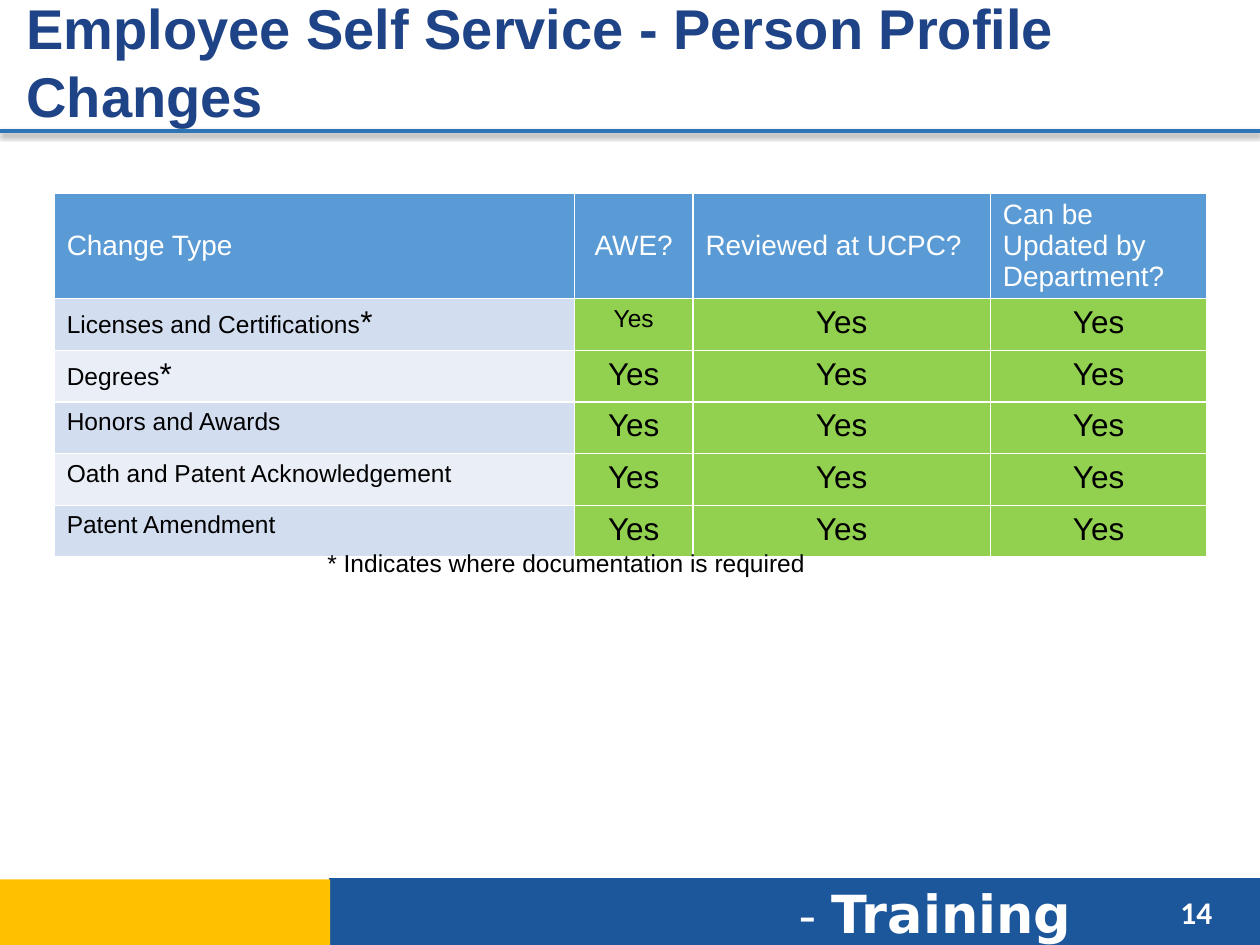
from lxml import etree
from pptx import Presentation
from pptx.dml.color import RGBColor
from pptx.enum import shapes, text
from pptx.oxml import parse_xml
from pptx.util import Inches, Pt


def rgb(value):
    return RGBColor.from_string(value)


def style(run, size, color, font="Arial", bold=False):
    run.font.size = Pt(size)
    run.font.name = font
    run.font.bold = bold
    run.font.color.rgb = rgb(color)


prs = Presentation()
prs.slide_width, prs.slide_height = Inches(10), Inches(7.5)
slide = prs.slides.add_slide(prs.slide_layouts[5])

# Footer bands
for left, top, width, color in [(2.61, 6.97, 7.39, "1D579B"),
                                (-0.01, 6.98, 2.63, "FFC000")]:
    band = slide.shapes.add_shape(shapes.MSO_SHAPE.RECTANGLE, Inches(left),
                                  Inches(top), Inches(width), Inches(0.55))
    band.shadow.inherit = False
    band.fill.solid()
    band.fill.fore_color.rgb = rgb(color)
    band.line.fill.background()

# Rule under the title, with a soft shadow
rule = slide.shapes.add_connector(shapes.MSO_CONNECTOR.STRAIGHT, Inches(0),
                                  Inches(1.04), Inches(10), Inches(1.04))
rule.line.color.rgb = rgb("2E75B5")
rule.line.width = Pt(2.25)
rule._element.spPr.append(parse_xml(
    '<a:effectLst xmlns:a="http://schemas.openxmlformats.org/drawingml/2006/main">'
    '<a:outerShdw blurRad="39370" dist="20320" dir="5400000" rotWithShape="0">'
    '<a:srgbClr val="000000"><a:alpha val="38000"/></a:srgbClr>'
    '</a:outerShdw></a:effectLst>'))

# Title
title = slide.shapes.title
title.left, title.top = Inches(0.11), Inches(-0.04)
title.width, title.height = Inches(9.37), Inches(1.05)
title.text_frame.text = "Employee Self Service - Person Profile Changes"
title.text_frame.auto_size = text.MSO_AUTO_SIZE.NONE
title.text_frame.vertical_anchor = text.MSO_ANCHOR.MIDDLE
heading = title.text_frame.paragraphs[0]
heading.alignment = text.PP_ALIGN.LEFT
style(heading.runs[0], 32, "1E4386", bold=True)

# Table of change types
headers = ["Change Type", "AWE?", "Reviewed at UCPC?",
           "Can be Updated by Department?"]
changes = ["Licenses and Certifications*", "Degrees*", "Honors and Awards",
           "Oath and Patent Acknowledgement", "Patent Amendment"]
rows = [headers] + [[change] + ["Yes"] * 3 for change in changes]
table = slide.shapes.add_table(len(rows), len(headers), Inches(0.43), Inches(1.53),
                               Inches(9.15), Inches(0.41 * len(rows))).table
for column, width in zip(table.columns, [4.13, 0.94, 2.36, 1.72]):
    column.width = Inches(width)

for r, row in enumerate(rows):
    table.rows[r].height = Inches(0.41)
    for c, value in enumerate(row):
        cell = table.cell(r, c)
        paragraph = cell.text_frame.paragraphs[0]
        cell.fill.solid()
        if r == 0:
            fill, size, color = "5B9BD5", 16, "FFFFFF"
            cell.vertical_anchor = text.MSO_ANCHOR.MIDDLE
        elif c == 0:
            fill, size, color = ("D2DEEF" if r % 2 else "EAEFF7"), 14, "000000"
        else:
            fill, size, color = "92D050", (14 if (r, c) == (1, 1) else 18), "000000"
        cell.fill.fore_color.rgb = rgb(fill)
        if c == 1 or (r and c):
            paragraph.alignment = text.PP_ALIGN.CENTER
        paragraph.text = value.rstrip("*")
        style(paragraph.runs[0], size, color)
        if value.endswith("*"):
            star = paragraph.add_run()
            star.text = "*"
            style(star, 18, color)

# Footnote, footer label and page number
labels = [
    (2.5, 4.3, 4.23, 0.34,
     [("* Indicates where documentation is required", 14, "000000", "Arial", False)]),
    (6.24, 6.94, 2.8, 0.61,
     [("- ", 28, "FFFFFF", "DejaVu Sans", False),
      ("Training", 30, "FFFFFF", "DejaVu Sans", True)]),
    (9.27, 7.04, 0.6, 0.4, [("14", 18, "FFFFFF", "Calibri", True)]),
]
for left, top, width, height, parts in labels:
    label = slide.shapes.add_textbox(Inches(left), Inches(top),
                                     Inches(width), Inches(height))
    label.text_frame.word_wrap = True
    for words, *look in parts:
        run = label.text_frame.paragraphs[0].add_run()
        run.text = words
        style(run, *look)

prs.save("out.pptx")
